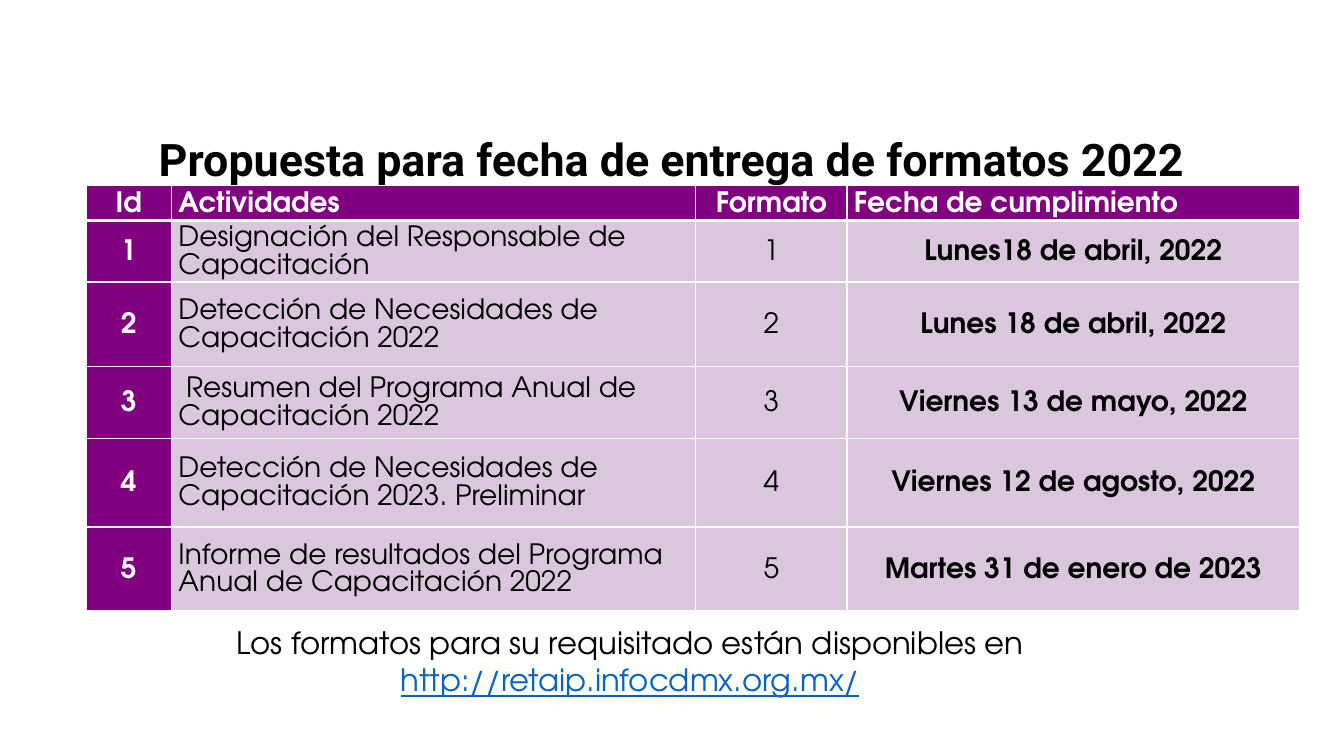
"""Build a slide with the 2022 schedule for handing in training formats."""
from dataclasses import dataclass

import pptx
import pptx.dml.color
import pptx.enum.text
import pptx.oxml
import pptx.oxml.ns
import pptx.util

Pt = pptx.util.Pt
RGB = pptx.dml.color.RGBColor.from_string
ALIGN = pptx.enum.text.PP_ALIGN
ANCHOR = pptx.enum.text.MSO_ANCHOR


@dataclass(frozen=True)
class Theme:
    """Colours, fonts and type sizes of the slide."""
    purple: str = "800080"
    lilac: str = "DAC7DD"
    white: str = "FFFFFF"
    black: str = "000000"
    link: str = "0563C1"
    title_font: str = "Roboto"
    body_font: str = "TeX Gyre Adventor"
    title_size: int = 32
    table_size: int = 20
    note_size: int = 22


THEME = Theme()
COLUMN_WIDTHS = (61, 374.5, 108, 323.5)
ROW_HEIGHTS = (25, 44, 60.5, 51, 63.5, 60)
COLUMN_ALIGNS = (ALIGN.CENTER, ALIGN.LEFT, ALIGN.CENTER, ALIGN.CENTER)
HEADINGS = ("Id", "Actividades", "Formato", "Fecha de cumplimiento")
ACTIVITIES = (
    ("Designación del Responsable de Capacitación", "Lunes18 de abril, 2022"),
    ("Detección de Necesidades de Capacitación 2022", "Lunes 18 de abril, 2022"),
    ("\u00a0Resumen del Programa Anual de Capacitación 2022", "Viernes 13 de mayo, 2022"),
    ("Detección de Necesidades de Capacitación 2023. Preliminar", "Viernes 12 de agosto, 2022"),
    ("Informe de resultados del Programa Anual de Capacitación 2022", "Martes 31 de enero de 2023"),
)
NOTE = "Los formatos para su requisitado están disponibles en"
ADDRESS = "http://retaip.infocdmx.org.mx/"


def style(p, font, size, color, align, bold=False, underline=False):
    """Set the alignment and font of a paragraph."""
    p.alignment = align
    f = p.font
    f.name, f.size, f.bold, f.underline = font, Pt(size), bold, underline
    f.color.rgb = RGB(color)


def add_title(s, text):
    """Place and format the title placeholder."""
    sp = s.shapes.title
    sp.left, sp.top, sp.width, sp.height = Pt(-39), Pt(95), Pt(1038), Pt(32)
    tf = sp.text_frame
    tf.text = text
    tf.word_wrap = True
    tf.auto_size = pptx.enum.text.MSO_AUTO_SIZE.NONE
    tf.vertical_anchor = ANCHOR.TOP
    p = tf.paragraphs[0]
    p.line_spacing = 0.9
    p.space_before = Pt(0)
    style(p, THEME.title_font, THEME.title_size, THEME.black, ALIGN.CENTER, bold=True)


def set_borders(cell, top, bottom):
    """Draw white cell borders, with the given top and bottom widths."""
    tcPr = cell._tc.get_or_add_tcPr()
    widths = {"lnL": 1, "lnR": 1, "lnT": top, "lnB": bottom}
    for i, (tag, width) in enumerate(widths.items()):
        ln = pptx.oxml.parse_xml(
            f'<a:{tag} {pptx.oxml.ns.nsdecls("a")} w="{Pt(width)}">'
            f'<a:solidFill><a:srgbClr val="{THEME.white}"/></a:solidFill></a:{tag}>')
        tcPr.insert(i, ln)


def fill_cell(cell, text, align, fill, color, bold):
    """Write and format one table cell."""
    cell.text = text
    cell.vertical_anchor = ANCHOR.MIDDLE
    cell.margin_left = cell.margin_right = Pt(5)
    cell.margin_top, cell.margin_bottom = Pt(0.7), Pt(0)
    cell.fill.solid()
    cell.fill.fore_color.rgb = RGB(fill)
    p = cell.text_frame.paragraphs[0]
    p.line_spacing = 1.07
    p.space_after = Pt(8)
    style(p, THEME.body_font, THEME.table_size, color, align, bold)


def add_schedule(s):
    """Add the table of activities, formats and due dates."""
    rows = [HEADINGS] + [(str(n), activity, str(n), date)
                         for n, (activity, date) in enumerate(ACTIVITIES, 1)]
    table = s.shapes.add_table(len(rows), len(HEADINGS), Pt(61.5), Pt(132.5),
                               Pt(sum(COLUMN_WIDTHS)), Pt(sum(ROW_HEIGHTS))).table
    table.first_col = True
    table.horz_banding = False
    for column, width in zip(table.columns, COLUMN_WIDTHS):
        column.width = Pt(width)
    for i, texts in enumerate(rows):
        table.rows[i].height = Pt(ROW_HEIGHTS[i])
        for j, text in enumerate(texts):
            cell = table.cell(i, j)
            is_head = i == 0 or j == 0
            align = ALIGN.LEFT if i == 0 and j == 3 else COLUMN_ALIGNS[j]
            fill_cell(cell, text, align,
                      fill=THEME.purple if is_head else THEME.lilac,
                      color=THEME.white if is_head else THEME.black,
                      bold=is_head or j == 3)
            set_borders(cell, top=3 if i == 1 else 1, bottom=3 if i == 0 else 1)


def add_note(s):
    """Add the closing note with the web address."""
    tf = s.shapes.add_textbox(Pt(-24.5), Pt(442), Pt(949), Pt(60.5)).text_frame
    tf.word_wrap = True
    tf.text = f"{NOTE}\n{ADDRESS}"
    note, address = tf.paragraphs
    style(note, THEME.body_font, THEME.note_size, THEME.black, ALIGN.CENTER)
    style(address, THEME.body_font, THEME.note_size, THEME.link, ALIGN.CENTER, underline=True)


def main():
    """Build and save the presentation."""
    prs = pptx.Presentation()
    prs.slide_width, prs.slide_height = Pt(960), Pt(540)
    s = prs.slides.add_slide(prs.slide_layouts.get_by_name("Title Only"))
    add_title(s, "Propuesta para fecha de entrega de formatos 2022")
    add_schedule(s)
    add_note(s)
    prs.save("out.pptx")


if __name__ == "__main__":
    main()
